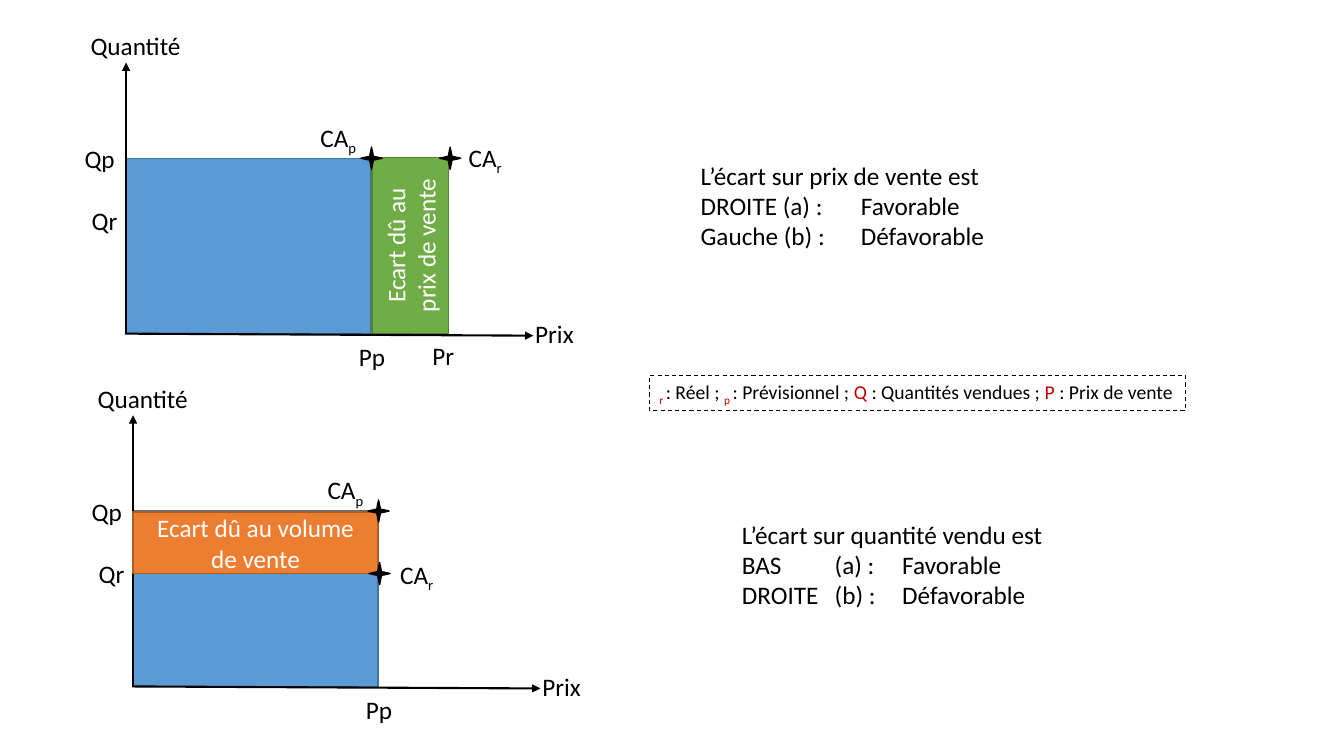
from lxml import etree
from pptx import Presentation
from pptx.dml.color import RGBColor
from pptx.enum.dml import MSO_LINE
from pptx.enum.shapes import MSO_CONNECTOR, MSO_SHAPE
from pptx.enum.text import MSO_ANCHOR, PP_ALIGN
from pptx.oxml.ns import qn
from pptx.util import Inches, Pt

RECT, STAR = MSO_SHAPE.RECTANGLE, MSO_SHAPE.STAR_4_POINT
STRAIGHT, DASH = MSO_CONNECTOR.STRAIGHT, MSO_LINE.DASH
CENTER, LEFT, MIDDLE = PP_ALIGN.CENTER, PP_ALIGN.LEFT, MSO_ANCHOR.MIDDLE
COLORS = {
    "black": "000000", "white": "FFFFFF", "red": "C00000",
    "blue": "5B9BD5", "blue_edge": "43739E",
    "green": "70AD47", "green_edge": "538035",
    "orange": "ED7D31", "orange_edge": "AF5C24",
}


def rgb(name):
    """Return the named colour."""
    return RGBColor.from_string(COLORS[name])


class VarianceSlide:
    """Draw the sales variance diagrams in one style."""

    def __init__(self, slide, font="Calibri", size=18):
        """Keep the slide and its text style."""
        self.shapes, self.font, self.size = slide.shapes, font, size

    def add_run(self, p, text, color="black", size=None, sub=False):
        """Add a styled run to a paragraph."""
        r = p.add_run()
        r.text = text
        r.font.name = self.font
        r.font.size = Pt(size or self.size)
        r.font.color.rgb = rgb(color)
        if sub:
            r._r.get_or_add_rPr().set("baseline", "-25000")

    def label(self, x, y, text, sub="", w=1.48):
        """Add a one-line label with an optional subscript."""
        tf = self.shapes.add_textbox(Inches(x), Inches(y), Inches(w), Inches(0.4)).text_frame
        tf.word_wrap = True
        self.add_run(tf.paragraphs[0], text)
        if sub:
            self.add_run(tf.paragraphs[0], sub, sub=True)

    def note(self, x, y, lines, stops):
        """Add a text block whose columns follow tab stops."""
        tf = self.shapes.add_textbox(Inches(x), Inches(y), Inches(5.99), Inches(1.01)).text_frame
        tf.word_wrap = True
        for i, line in enumerate(lines):
            p = tf.add_paragraph() if i else tf.paragraphs[0]
            self.add_run(p, line)
            tabs = etree.SubElement(p._p.get_or_add_pPr(), qn("a:tabLst"))
            for stop in stops:
                etree.SubElement(tabs, qn("a:tab"), pos=str(Inches(stop)), algn="l")

    def shape(self, kind, x, y, w, h, fill=None, edge="black", width=1):
        """Add a preset shape."""
        sp = self.shapes.add_shape(kind, Inches(x), Inches(y), Inches(w), Inches(h))
        sp.shadow.inherit = False
        if fill:
            sp.fill.solid()
            sp.fill.fore_color.rgb = rgb(fill)
        else:
            sp.fill.background()
        sp.line.color.rgb = rgb(edge)
        sp.line.width = Pt(width)
        return sp

    def block(self, x, y, w, h, color, text="", vertical=False):
        """Add a coloured area with an optional caption."""
        tf = self.shape(RECT, x, y, w, h, color, color + "_edge").text_frame
        if text:
            tf.word_wrap = True
            tf.vertical_anchor = MIDDLE
            tf.paragraphs[0].alignment = CENTER
            self.add_run(tf.paragraphs[0], text, "white")
        if vertical:
            tf._txBody.bodyPr.set("vert", "vert270")

    def star(self, x, y):
        """Mark a point with a star centred on it."""
        self.shape(STAR, x - 0.1, y - 0.11, 0.21, 0.22, "black")

    def arrow(self, x1, y1, x2, y2):
        """Add a straight arrow."""
        c = self.shapes.add_connector(STRAIGHT, Inches(x1), Inches(y1), Inches(x2), Inches(y2))
        c.line.color.rgb = rgb("black")
        c.line.width = Pt(1.5)
        etree.SubElement(c.line._get_or_add_ln(), qn("a:tailEnd"), type="triangle")
        etree.SubElement(c._element.spPr, qn("a:effectLst"))

    def axes(self, x, y):
        """Add the price and quantity axes with their shared labels."""
        self.arrow(x, y, x, y - 2.69)
        self.arrow(x - 0.01, y, x + 4.04, y + 0.02)
        self.label(x - 0.45, y - 3.06, "Quantité", w=1.34)
        self.label(x + 3.96, y - 0.2, "Prix")
        self.label(x + 2.21, y + 0.03, "Pp")
        self.label(x - 0.51, y - 1.94, "Qp")
        self.label(x - 0.44, y - 1.32, "Qr")
        self.label(x + 1.83, y - 2.15, "CA", "p", 0.95)

    def legend(self, x, y, w, h, parts):
        """Add the dashed key made of symbols and meanings."""
        sp = self.shape(RECT, x, y, w, h, width=0.75)
        sp.line.dash_style = DASH
        tf = sp.text_frame
        tf.word_wrap = True
        p = tf.paragraphs[0]
        p.alignment = LEFT
        for symbol, meaning in parts:
            self.add_run(p, symbol + " ", "red", 14, symbol.islower())
            self.add_run(p, meaning, size=14)


def main():
    """Build and save the slide."""
    prs = Presentation()
    prs.slide_width, prs.slide_height = Inches(13.33), Inches(7.5)
    s = VarianceSlide(prs.slides.add_slide(prs.slide_layouts[6]))
    planned_w, planned_h = 2.43, 1.74

    x, y = 1.25, 3.31
    s.block(x, y - planned_h, planned_w, planned_h, "blue")
    s.block(x + 2.44, y - 1.75, 0.76, 1.75, "green", "Ecart dû au prix de vente", True)
    s.axes(x, y)
    s.label(x + 2.94, y + 0.02, "Pr")
    s.label(x + 3.3, y - 1.95, "CA", "r", 0.95)
    s.star(x + planned_w, y - planned_h)
    s.star(x + 3.21, y - planned_h)

    x, y = 1.32, 6.81
    s.block(x, y - planned_h, planned_w, planned_h, "blue")
    s.axes(x, y)
    s.block(x, y - 1.73, planned_w, 0.61, "orange", "Ecart dû au volume de vente")
    s.label(x + 2.55, y - 1.31, "CA", "r", 0.95)
    s.star(x + planned_w, y - planned_h)
    s.star(x + 2.44, y - 1.12)

    s.note(6.85, 1.54, ["L’écart sur prix de vente est",
                        "DROITE (a) :\tFavorable",
                        "Gauche (b) :\tDéfavorable"], [1.59])
    s.note(7.26, 5.1, ["L’écart sur quantité vendu est",
                       "BAS\t(a) :\tFavorable",
                       "DROITE\t(b) :\tDéfavorable"], [0.92, 1.59])
    s.legend(6.44, 3.73, 5.32, 0.34, [
        ("r", ": Réel ; "), ("p", ": Prévisionnel ; "),
        ("Q", ": Quantités vendues ; "), ("P", ": Prix de vente")])
    prs.save("out.pptx")


if __name__ == "__main__":
    main()
